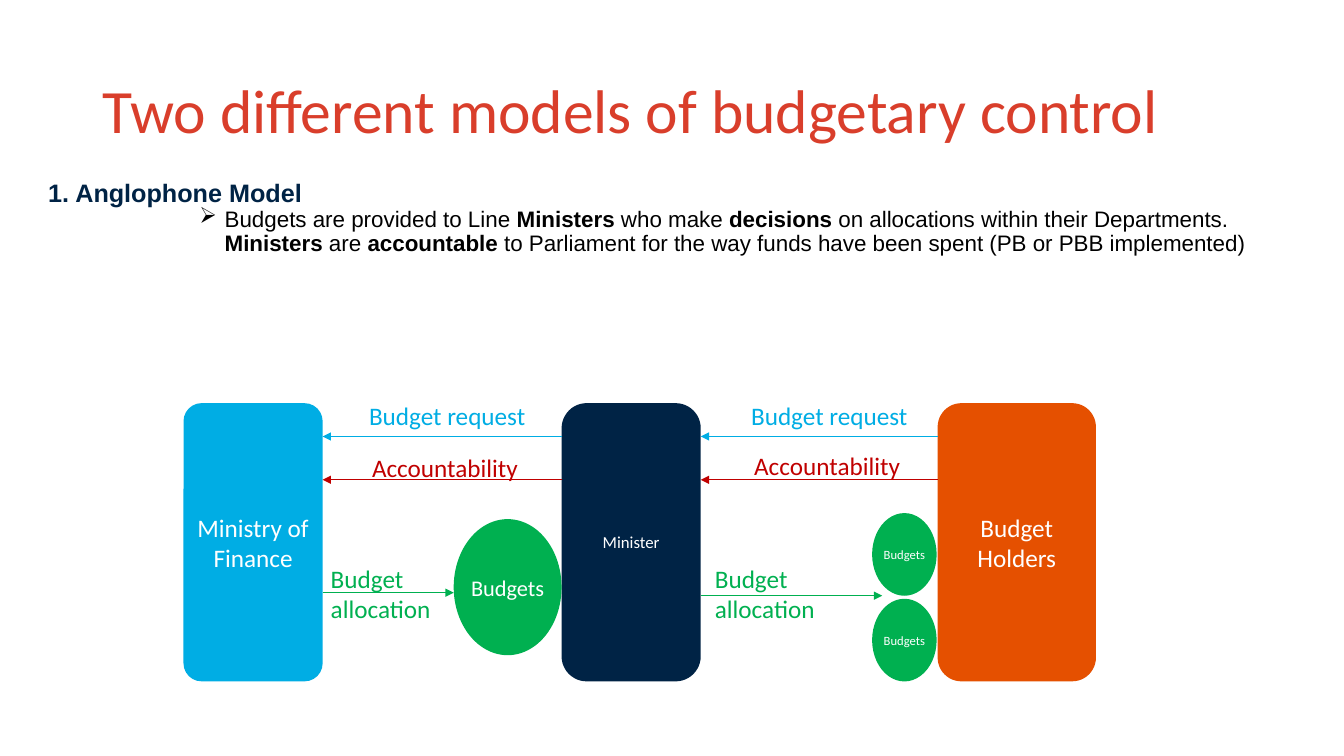
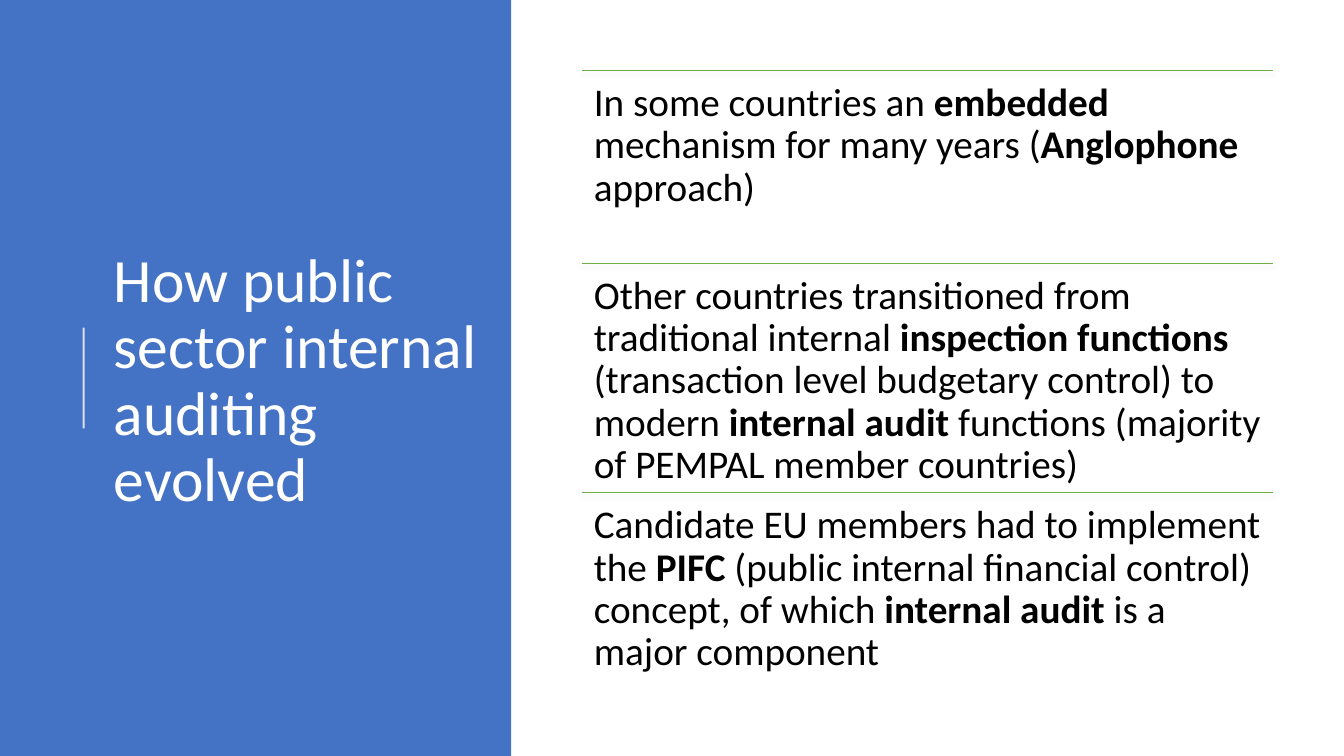
"""Builds two slides on budgetary control models and public sector internal auditing."""
from lxml import etree
from pptx import Presentation
from pptx import util as u
from pptx.dml.color import RGBColor
from pptx.enum import shapes, text
from pptx.oxml.ns import qn

PX = 9144
COLORS = {
    "title": "D93E2B", "navy": "002345", "sky": "00ADE4", "orange": "E55000",
    "green": "00B050", "red": "C00000", "panel": "4472C4", "rule": "70AD47",
    "white": "FFFFFF", "black": "000000",
}


class Deck:
    """Holds the presentation, its style and the current slide."""

    def __init__(self):
        self.prs = Presentation()
        self.prs.slide_width, self.prs.slide_height = u.Emu(1333 * PX), u.Emu(750 * PX)
        self.slide = None

    def new_slide(self):
        """Start a slide on the blank layout."""
        self.slide = self.prs.slides.add_slide(self.prs.slide_layouts[6])

    def color(self, name):
        """Look up a colour by name."""
        return RGBColor.from_string(COLORS[name])

    def child(self, parent, tag, **attributes):
        """Append a drawing element to its parent."""
        element = etree.SubElement(parent, qn(tag))
        for key, value in attributes.items():
            element.set(key, str(value))
        return element

    def frame(self, shape, inset, anchor, wrap=True):
        """Set the margins, anchor and wrapping of a shape's text."""
        body = shape.text_frame
        body.word_wrap = wrap
        body.vertical_anchor = anchor
        across, down = (inset, inset) if inset is not None else (10, 5)
        body.margin_left = body.margin_right = u.Emu(across * PX)
        body.margin_top = body.margin_bottom = u.Emu(down * PX)
        return body

    def add_words(self, paragraph, words, size, color, font="Calibri", spacing=None, align=None):
        """Fill a paragraph; words between double asterisks are bold."""
        paragraph.alignment = align
        if spacing:
            paragraph.line_spacing = spacing
        for index, part in enumerate(words.split("**")):
            if part:
                run = paragraph.add_run()
                run.text = part
                run.font.size = u.Pt(size)
                run.font.name = font
                run.font.bold = index % 2 == 1
                run.font.color.rgb = self.color(color)

    def text(self, box, words, size, color, inset=None, anchor=text.MSO_ANCHOR.TOP,
             spacing=None, wrap=True):
        """Add a text box with one paragraph per line."""
        body = self.frame(self.slide.shapes.add_textbox(*(u.Emu(v * PX) for v in box)),
                          inset, anchor, wrap)
        for index, line in enumerate(words.split("\n")):
            paragraph = body.add_paragraph() if index else body.paragraphs[0]
            self.add_words(paragraph, line, size, color, spacing=spacing)

    def title(self, box, words, color):
        """Add a slide title."""
        self.text(box, words, 44, color, anchor=text.MSO_ANCHOR.MIDDLE, spacing=0.9)

    def label(self, box, words, color):
        """Add a label beside an arrow."""
        self.text(box, words, 18, color, 4, text.MSO_ANCHOR.MIDDLE, wrap="\n" not in words)

    def shape(self, kind, box, fill, words="", size=18, inset=4, corner=None):
        """Add a filled shape with centred white text."""
        shape = self.slide.shapes.add_shape(kind, *(u.Emu(v * PX) for v in box))
        shape.shadow.inherit = False
        shape.fill.solid()
        shape.fill.fore_color.rgb = self.color(fill)
        shape.line.fill.background()
        if corner:
            shape.adjustments[0] = corner
        body = self.frame(shape, inset, text.MSO_ANCHOR.MIDDLE)
        for index, line in enumerate(words.split("\n")):
            paragraph = body.add_paragraph() if index else body.paragraphs[0]
            self.add_words(paragraph, line, size, "white", align=text.PP_ALIGN.CENTER)

    def line(self, start, end, color, width=0.75, arrow=False, shadow=False, alpha=None):
        """Add a straight line, with an arrowhead, soft shadow or transparency if asked."""
        line = self.slide.shapes.add_connector(
            shapes.MSO_CONNECTOR.STRAIGHT, *(u.Emu(v * PX) for v in (*start, *end)))
        line.line.width = u.Pt(width)
        line.line.color.rgb = self.color(color)
        outline = line._element.spPr.find(qn("a:ln"))
        if alpha:
            self.child(outline.find(".//" + qn("a:srgbClr")), "a:alpha", val=alpha * 1000)
        if arrow:
            self.child(outline, "a:tailEnd", type="triangle")
        effects = self.child(line._element.spPr, "a:effectLst")
        if shadow:
            cast = self.child(effects, "a:outerShdw", blurRad=int(u.Pt(3.1)),
                              dist=int(u.Pt(1.8)), dir=90 * 60000, rotWithShape=0)
            self.child(self.child(cast, "a:srgbClr", val=COLORS["black"]), "a:alpha", val=35000)

    def model(self, box, heading, detail):
        """Add a bold heading with an indented arrow bullet below it."""
        body = self.frame(self.slide.shapes.add_textbox(*(u.Emu(v * PX) for v in box)),
                          None, text.MSO_ANCHOR.TOP)
        self.add_words(body.paragraphs[0], f"**{heading}**", 18, "navy", "Arial", 1.14)
        bullet = body.add_paragraph()
        bullet.level = 3
        properties = bullet._p.get_or_add_pPr()
        properties.set("marL", str(175 * PX))
        properties.set("indent", str(-25 * PX))
        self.child(properties, "a:buChar", char="➢")
        self.add_words(bullet, detail, 16, "black", "Arial", 0.9)


def control_models(deck):
    """Draw the flow of budgets between ministry, minister and budget holders."""
    deck.new_slide()
    deck.title((92, 40, 1150, 145), "Two different models of budgetary control", "title")
    rounded, oval = shapes.MSO_SHAPE.ROUNDED_RECTANGLE, shapes.MSO_SHAPE.OVAL
    for left, width, fill, actor, size, corner in (
            (930, 157, "orange", "Budget\nHolders", 18, 0.15),
            (557, 138, "navy", "Minister", 12, 0.18),
            (182, 138, "sky", "Ministry of Finance", 18, 0.13)):
        deck.shape(rounded, (left, 400, width, 276), fill, actor, size, corner=corner)
    for budget, size in (((450, 515, 107, 135), 16), ((865, 509, 64, 82), 9),
                         ((865, 594, 64, 82), 9)):
        deck.shape(oval, budget, "green", "Budgets", size, 0)
    for giver, receiver, request_left, accountability_top, allocation_left, allocation_y, end in (
            (320, 557, 362, 445, 324, 588, 450), (695, 930, 741, 443, 705, 591, 875)):
        deck.line((receiver, 433), (giver, 433), "sky", arrow=True)
        deck.line((receiver, 476), (giver, 476), "red", arrow=True)
        deck.line((giver, allocation_y), (end, allocation_y), "green", arrow=True)
        deck.label((request_left, 393, 174, 38), "Budget request", "sky")
        deck.label((request_left + 3, accountability_top, 174, 38), "Accountability", "red")
        deck.label((allocation_left, 555, 108, 68), "Budget\nallocation", "green")
    deck.model((38, 167, 1231, 146), "1. Anglophone Model",
               "Budgets are provided to Line **Ministers** who make **decisions** on allocations "
               "within their Departments. **Ministers** are **accountable** to Parliament for the "
               "way funds have been spent (PB or PBB implemented)")


def audit_evolution(deck):
    """Draw the title panel and the three ruled statements."""
    deck.new_slide()
    deck.shape(shapes.MSO_SHAPE.RECTANGLE, (0, 0, 507, 750), "panel")
    deck.title((103, 78, 387, 602), "How public sector internal auditing evolved", "white")
    deck.line((83, 425), (83, 325), "white", 1.5, alpha=80)
    for top, height, statement in (
            (70, 191, "In some countries an **embedded** mechanism for many years "
                      "(**Anglophone** approach)"),
            (261, 227, "Other countries transitioned from traditional internal **inspection "
                       "functions **(transaction level budgetary control) to modern **internal "
                       "audit **functions (majority of PEMPAL member countries)"),
            (489, 191, "Candidate EU members had to implement the **PIFC** (public internal "
                       "financial control) concept, of which **internal audit **is a major "
                       "component")):
        deck.line((577, top), (1263, top), "rule", shadow=True)
        deck.text((577, top, 686, height), statement, 28, "black", 12, spacing=0.9)


def main():
    """Build both slides and save them."""
    deck = Deck()
    control_models(deck)
    audit_evolution(deck)
    deck.prs.save("out.pptx")


if __name__ == "__main__":
    main()
